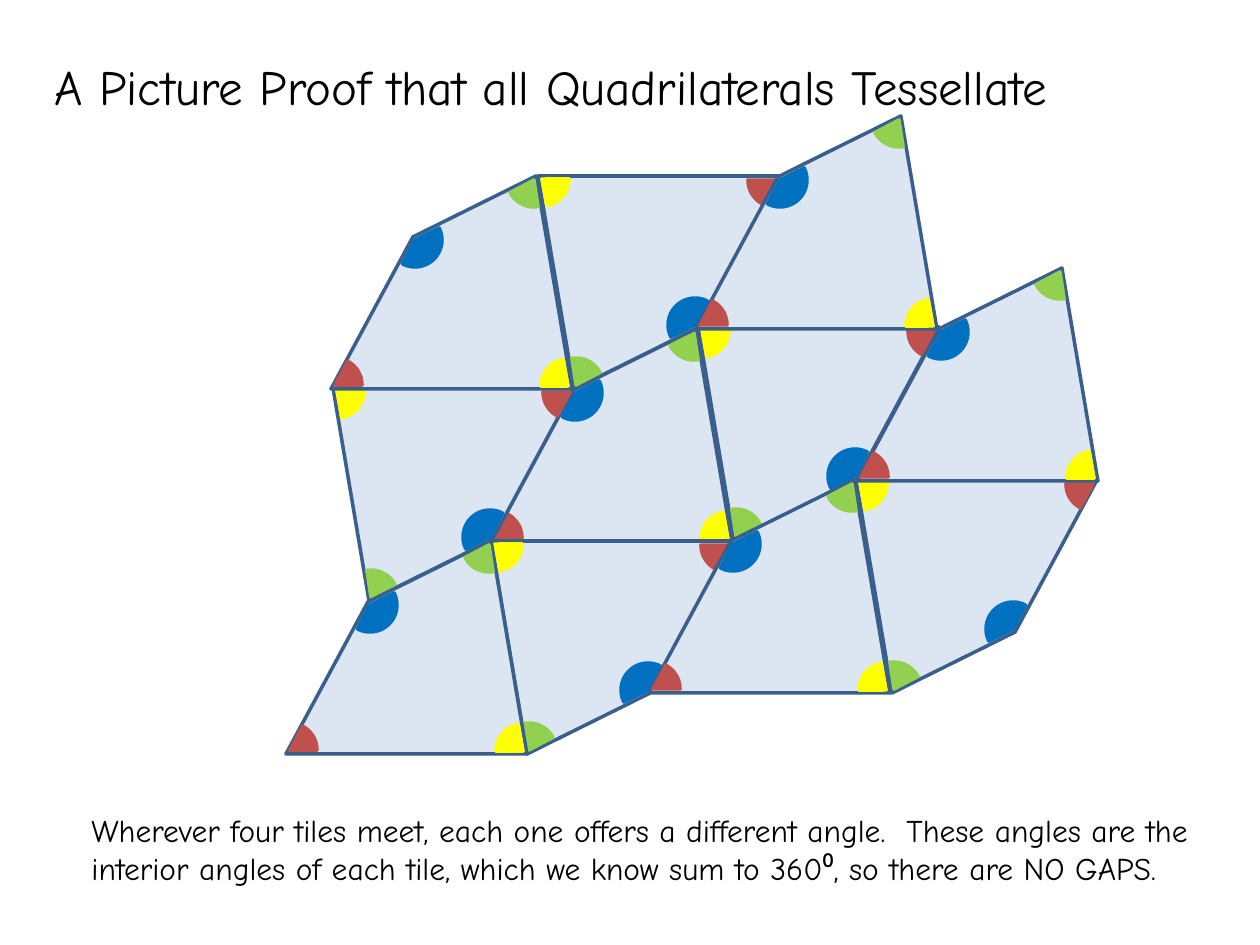
import pptx
import pptx.util
from pptx.dml.color import RGBColor
from pptx.enum.shapes import MSO_SHAPE
from pptx.enum.text import MSO_AUTO_SIZE

PX = 914400 / 126
FONT = "Comic Neue"
BLACK = RGBColor(0x00, 0x00, 0x00)
TILE_FILL = RGBColor(0xDC, 0xE6, 0xF2)
TILE_LINE = RGBColor(0x3A, 0x5F, 0x8C)
BLUE = RGBColor(0x00, 0x70, 0xC0)
GREEN = RGBColor(0x92, 0xD0, 0x50)
YELLOW = RGBColor(0xFF, 0xFF, 0x00)
RED = RGBColor(0xC0, 0x50, 0x4D)

TILE_WIDTH, TILE_HEIGHT = 241, 213
CORNERS = [(0, 213), (82, 61), (205, 0), (241, 213)]
PIE_SIZE = 54
# Offset in the upright tile, rotation, start and end adjustments, colour
ANGLES = [
    (57, 37, 0, 200.26, 70.42, BLUE),
    (176, -23, 0, 48.71, 91.34, GREEN),
    (210, 183, 0, 107.81, 155.68, YELLOW),
    (-23, 182, 90, 125.02, 162, RED),
]
# Left, top and rotation of each tile, from back to front
TILES = [
    (491, 329, 0), (491, 541, 180), (698, 327, 180), (538, 176, 180),
    (333, 388, 180), (331, 176, 0), (696, 116, 0), (286, 541, 0),
    (649, 480, 0), (856, 480, 180), (857, 268, 0),
]


def paint(shape, fill, line):
    shape.shadow.inherit = False
    shape.fill.solid()
    shape.fill.fore_color.rgb = fill
    shape.line.color.rgb = line
    shape.line.width = pptx.util.Pt(2)


def add_text(box, text, size, wrap):
    left, top, width, height = (round(value * PX) for value in box)
    frame = slide.shapes.add_textbox(left, top, width, height).text_frame
    frame.word_wrap = wrap
    frame.auto_size = MSO_AUTO_SIZE.SHAPE_TO_FIT_TEXT
    paragraph = frame.paragraphs[0]
    paragraph.text = text
    paragraph.font.name = FONT
    paragraph.font.size = pptx.util.Pt(size)
    paragraph.font.color.rgb = BLACK


presentation = pptx.Presentation()
presentation.slide_width = pptx.util.Inches(10)
presentation.slide_height = pptx.util.Inches(7.5)
slide = presentation.slides.add_slide(presentation.slide_layouts[6])

# Tiles, each grouped with its four marked angles
for left, top, turn in TILES:
    group = slide.shapes.add_group_shape()
    points = [(left + x, top + y) for x, y in CORNERS]
    builder = group.shapes.build_freeform(*points[0], scale=PX)
    builder.add_line_segments(points[1:], close=True)
    tile = builder.convert_to_shape()
    tile.rotation = turn
    paint(tile, TILE_FILL, TILE_LINE)

    for x, y, rotation, start, end, colour in ANGLES:
        if turn == 180:
            x = TILE_WIDTH - x - PIE_SIZE
            y = TILE_HEIGHT - y - PIE_SIZE
        pie = group.shapes.add_shape(
            MSO_SHAPE.PIE, round((left + x) * PX), round((top + y) * PX),
            round(PIE_SIZE * PX), round(PIE_SIZE * PX))
        pie.adjustments[0] = start
        pie.adjustments[1] = end
        pie.rotation = rotation + turn
        paint(pie, colour, colour)

# Title and explanation
add_text((42, 50, 1172, 72), "A Picture Proof that all Quadrilaterals Tessellate", 28, False)
add_text((79, 805, 1135, 127),
         "Wherever four tiles meet, each one offers a different angle.  These angles are the "
         "interior angles of each tile, which we know sum to 360⁰, so there are NO GAPS.", 18, True)

presentation.save("out.pptx")
